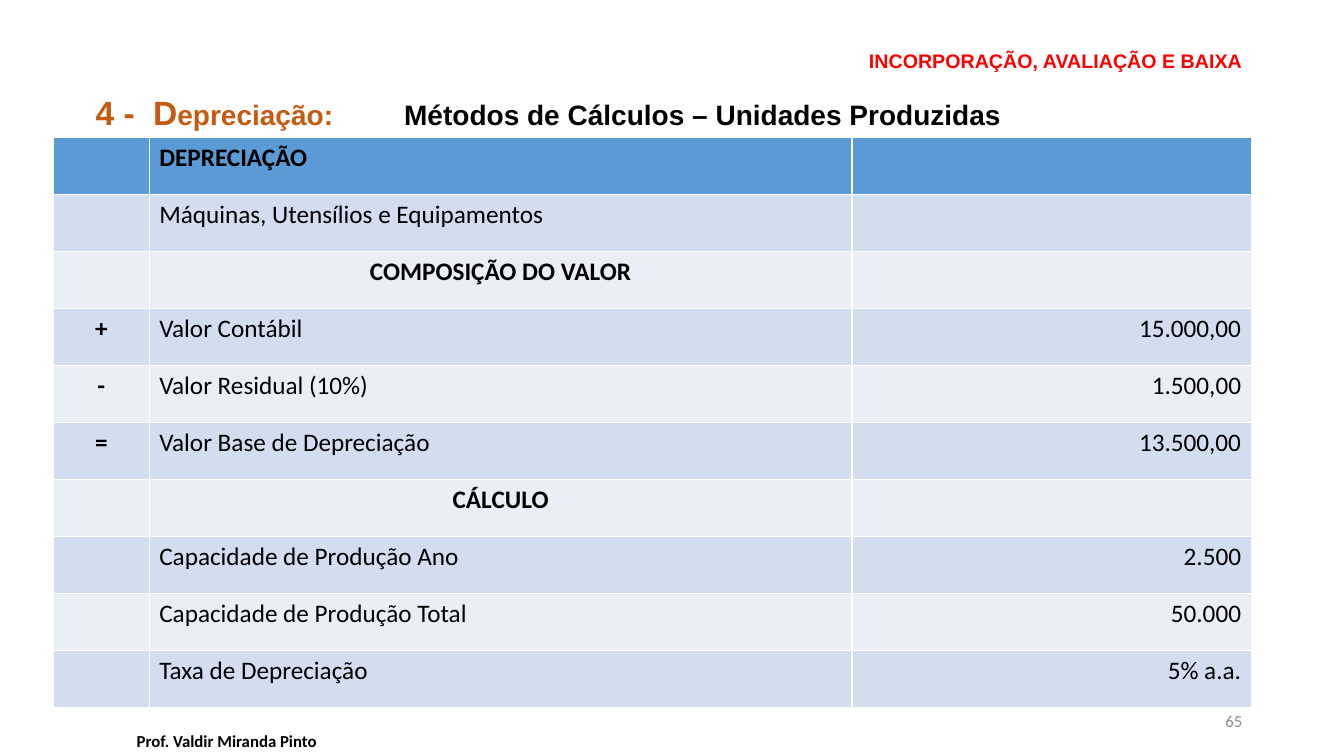
from pptx import Presentation
from pptx.util import Inches, Pt
from pptx.dml.color import RGBColor
from pptx.enum.text import PP_ALIGN as Align, MSO_ANCHOR as Anchor, MSO_AUTO_SIZE as Auto
from lxml.etree import SubElement

LEFT, MID, RIGHT = Align.LEFT, Align.CENTER, Align.RIGHT
BLACK = "000000"


def tint(code):
    return RGBColor.from_string(code)


def write(par, runs, align, line=1.0):
    par.alignment = align
    par.line_spacing = line
    for text, form in runs:
        run = par.add_run()
        run.text = text
        look = {"name": "Calibri", "size": 18, "bold": False, "color": BLACK} | form
        run.font.color.rgb = tint(look.pop("color"))
        look["size"] = Pt(look["size"])
        for key, val in look.items():
            setattr(run.font, key, val)


deck = Presentation()
deck.slide_width, deck.slide_height = Inches(13.33), Inches(7.5)
slide = deck.slides.add_slide(deck.slide_layouts[5])
shapes = slide.shapes

# Title, heading, footer and page number
arial = {"name": "Arial", "bold": True}
rust = arial | {"color": "C55A11"}
heads = [
    (shapes.title, (1.07, 0.43, 11.35, 0.38), Anchor.MIDDLE, RIGHT, 0.9,
     [("INCORPORAÇÃO, AVALIAÇÃO E BAIXA", arial | {"size": 14, "color": "FF0000"})]),
    (None, (0.85, 0.91, 11.66, 0.49), Anchor.TOP, LEFT, 0.9,
     [("4 -\tD", rust | {"size": 24}), ("epreciação:\t", rust | {"size": 20}),
      ("Métodos de Cálculos – Unidades Produzidas", arial | {"size": 20})]),
    (None, (0, 7.22, 4.5, 0.26), Anchor.MIDDLE, MID, 1.0,
     [("Prof. Valdir Miranda Pinto", {"size": 12, "bold": True})]),
    (None, (9.42, 6.95, 3, 0.4), Anchor.MIDDLE, RIGHT, 1.0,
     [("65", {"size": 12, "color": "8C8C8C"})]),
]
for box, place, anchor, align, line, runs in heads:
    spot = [Inches(n) for n in place]
    box = box or shapes.add_textbox(*spot)
    box.left, box.top, box.width, box.height = spot
    frame = box.text_frame
    frame.word_wrap, frame.auto_size = True, Auto.NONE
    frame.vertical_anchor = anchor
    par = frame.paragraphs[0]
    if "\t" in runs[0][0]:
        # Tab stops space out the parts of the heading
        tabs = SubElement(par._p.get_or_add_pPr(),
                          "{http://schemas.openxmlformats.org/drawingml/2006/main}tabLst")
        for stop in (0.57, 3.06):
            SubElement(tabs, tabs.tag.replace("tabLst", "tab"),
                       pos=str(Inches(stop)), algn="l")
    write(par, runs, align, line)

# Depreciation table: sign, item, value
rows = [
    ("", "DEPRECIAÇÃO", ""),
    ("", "Máquinas, Utensílios e Equipamentos", ""),
    ("", "COMPOSIÇÃO DO VALOR", ""),
    ("+", "Valor Contábil", "15.000,00"),
    ("-", "Valor Residual (10%)", "1.500,00"),
    ("=", "Valor Base de Depreciação", "13.500,00"),
    ("", "CÁLCULO", ""),
    ("", "Capacidade de Produção Ano", "2.500"),
    ("", "Capacidade de Produção Total", "50.000"),
    ("", "Taxa de Depreciação", "5% a.a."),
]
widths = (0.95, 6.97, 3.96)
grid = shapes.add_table(len(rows), len(widths), Inches(0.53), Inches(1.36),
                        Inches(sum(widths)), Inches(5.66)).table
for col, width in zip(grid.columns, widths):
    col.width = Inches(width)
for r, row in enumerate(rows):
    for c, text in enumerate(row):
        cell = grid.cell(r, c)
        cell.fill.solid()
        cell.fill.fore_color.rgb = tint("5B9BD5" if r == 0 else ("EAEFF7", "D2DEEF")[r % 2])
        if text:
            caps = text.isupper()
            align = MID if caps and r else (MID, LEFT, RIGHT)[c]
            write(cell.text_frame.paragraphs[0],
                  [(text, {"bold": caps or c == 0})], align)

deck.save("out.pptx")
